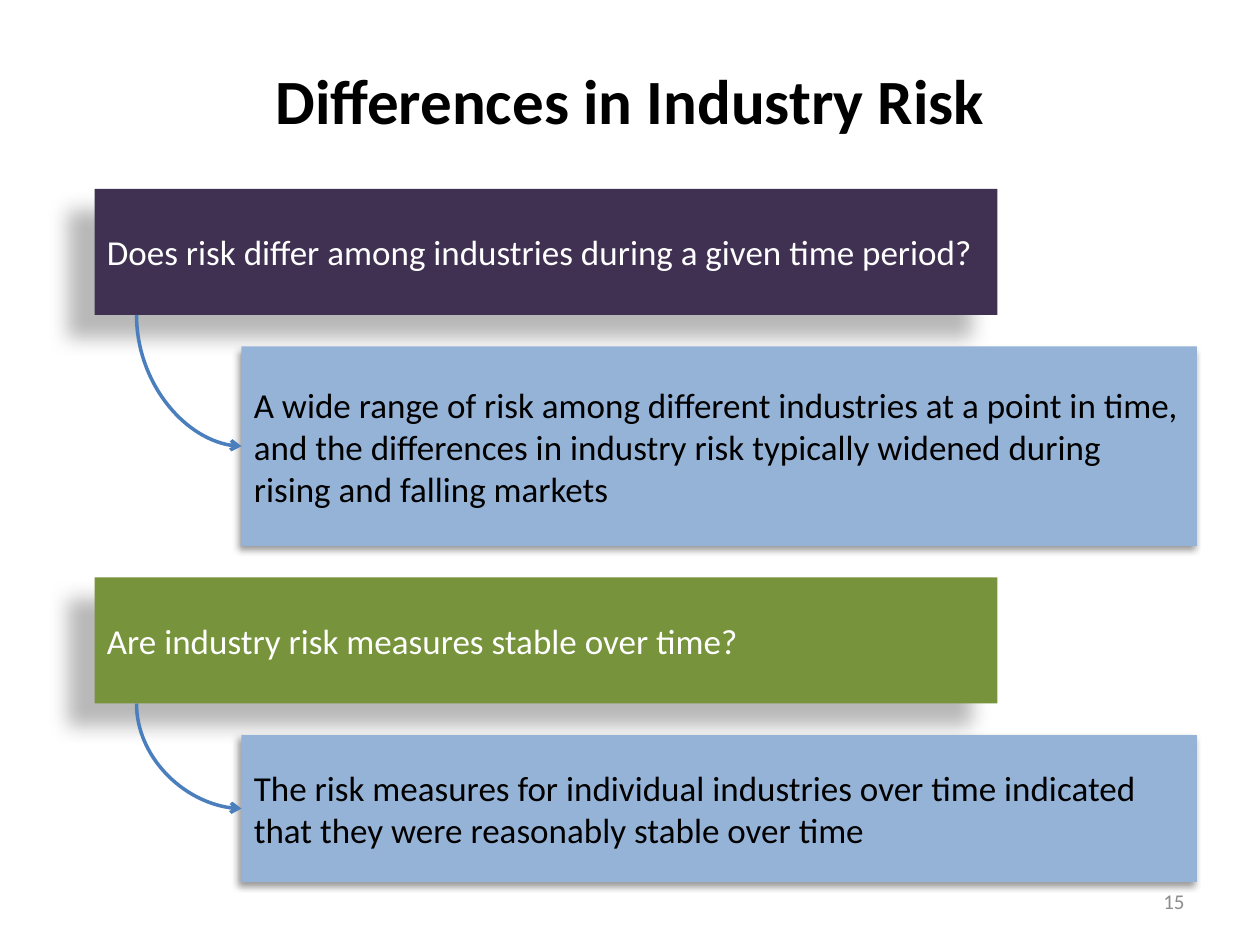
from lxml.etree import SubElement
from pptx import Presentation
from pptx.dml.color import RGBColor
from pptx.enum.shapes import MSO_CONNECTOR as Connector, MSO_SHAPE as Shape
from pptx.enum.text import MSO_ANCHOR as Anchor, PP_ALIGN as Align
from pptx.oxml.ns import qn
from pptx.util import Pt

GAP = 18
QUESTION_WIDTH, QUESTION_HEIGHT = 516, 72
ANSWER_INDENT, ANSWER_WIDTH = 84, 546
ARROW_INDENT = 24
# Shadows: opacity in %, blur, distance, direction in degrees
DEEP_SHADOW = (28, 11.8, 19.7, 141)
SOFT_SHADOW = (40, 4, 3, 135)

# Question, its colour, answer, height of the answer
PAIRS = [
    ("Does risk differ among industries during a given time period?", "403152",
     "A wide range of risk among different industries at a point in time, "
     "and the differences in industry risk typically widened during "
     "rising and falling markets", 114),
    ("Are industry risk measures stable over time?", "77933C",
     "The risk measures for individual industries over time indicated "
     "that they were reasonably stable over time", 84),
]


def color(value):
    return RGBColor.from_string(value)


def write_text(shape, text, size=20, fill="000000", bold=False, align=Align.LEFT):
    frame = shape.text_frame
    frame.word_wrap = True
    frame.vertical_anchor = Anchor.MIDDLE
    paragraph = frame.paragraphs[0]
    paragraph.alignment = align
    run = paragraph.add_run()
    run.text = text
    run.font.name = "Calibri"
    run.font.size = Pt(size)
    run.font.bold = bold
    run.font.color.rgb = color(fill)


def set_shadow(shape, opacity, blur, distance, direction):
    shape.shadow.inherit = False
    effects = shape.element.spPr.find(qn("a:effectLst"))
    shadow = SubElement(effects, qn("a:outerShdw"), blurRad=str(Pt(blur)),
                        dist=str(Pt(distance)), dir=str(direction * 60000),
                        algn="tr", rotWithShape="0")
    black = SubElement(shadow, qn("a:srgbClr"), val="000000")
    SubElement(black, qn("a:alpha"), val=str(opacity * 1000))


def add_box(shapes, left, top, width, height, fill, shadow, text, text_color):
    box = shapes.add_shape(Shape.RECTANGLE, Pt(left), Pt(top), Pt(width), Pt(height))
    box.fill.solid()
    box.fill.fore_color.rgb = color(fill)
    box.line.fill.background()
    set_shadow(box, *shadow)
    write_text(box, text, fill=text_color)


def add_curved_arrow(shapes, left, top, width, height):
    # The quarter curve is laid out sideways, then turned about its centre
    center_x, center_y = left + width / 2, top + height / 2
    arrow = shapes.add_connector(
        Connector.CURVE,
        Pt(center_x + height / 2), Pt(center_y - width / 2),
        Pt(center_x - height / 2), Pt(center_y + width / 2))
    arrow.line.color.rgb = color("4B7EBC")
    arrow.line.width = Pt(2)
    properties = arrow.element.spPr
    properties.find(qn("a:xfrm")).set("rot", str(270 * 60000))
    properties.find(qn("a:prstGeom")).set("prst", "curvedConnector2")
    SubElement(properties.find(qn("a:ln")), qn("a:tailEnd"), type="arrow")
    SubElement(properties, qn("a:effectLst"))


def add_pair(slide, left, top, question, fill, answer, answer_height):
    """Place a question, its answer and the arrow; return the bottom edge."""
    shapes = slide.shapes.add_group_shape().shapes
    question_bottom = top + QUESTION_HEIGHT
    answer_top = question_bottom + GAP
    add_box(shapes, left, top, QUESTION_WIDTH, QUESTION_HEIGHT,
            fill, DEEP_SHADOW, question, "FFFFFF")
    add_box(shapes, left + ANSWER_INDENT, answer_top, ANSWER_WIDTH, answer_height,
            "95B3D7", SOFT_SHADOW, answer, "000000")
    add_curved_arrow(shapes, left + ARROW_INDENT, question_bottom,
                     ANSWER_INDENT - ARROW_INDENT, GAP + answer_height / 2)
    return answer_top + answer_height


def add_title(slide, left, top, width, height):
    title = slide.shapes.title
    title.left, title.top = Pt(left), Pt(top)
    title.width, title.height = Pt(width), Pt(height)
    write_text(title, "Differences in Industry Risk", size=36, bold=True,
               align=Align.CENTER)


def add_page_number(slide, left, top, width, height):
    number = slide.shapes.add_textbox(Pt(left), Pt(top), Pt(width), Pt(height))
    write_text(number, "15", size=12, fill="8C8C8C", align=Align.RIGHT)


def main():
    presentation = Presentation()
    presentation.slide_width, presentation.slide_height = Pt(720), Pt(540)
    slide = presentation.slides.add_slide(presentation.slide_layouts[5])

    add_title(slide, 36, 12, 648, 90)
    # Question and answer pairs, stacked
    top = 108
    for pair in PAIRS:
        top = add_pair(slide, 54, top, *pair) + GAP
    add_page_number(slide, 516, 500.5, 168, 28.75)

    presentation.save("out.pptx")


if __name__ == "__main__":
    main()
